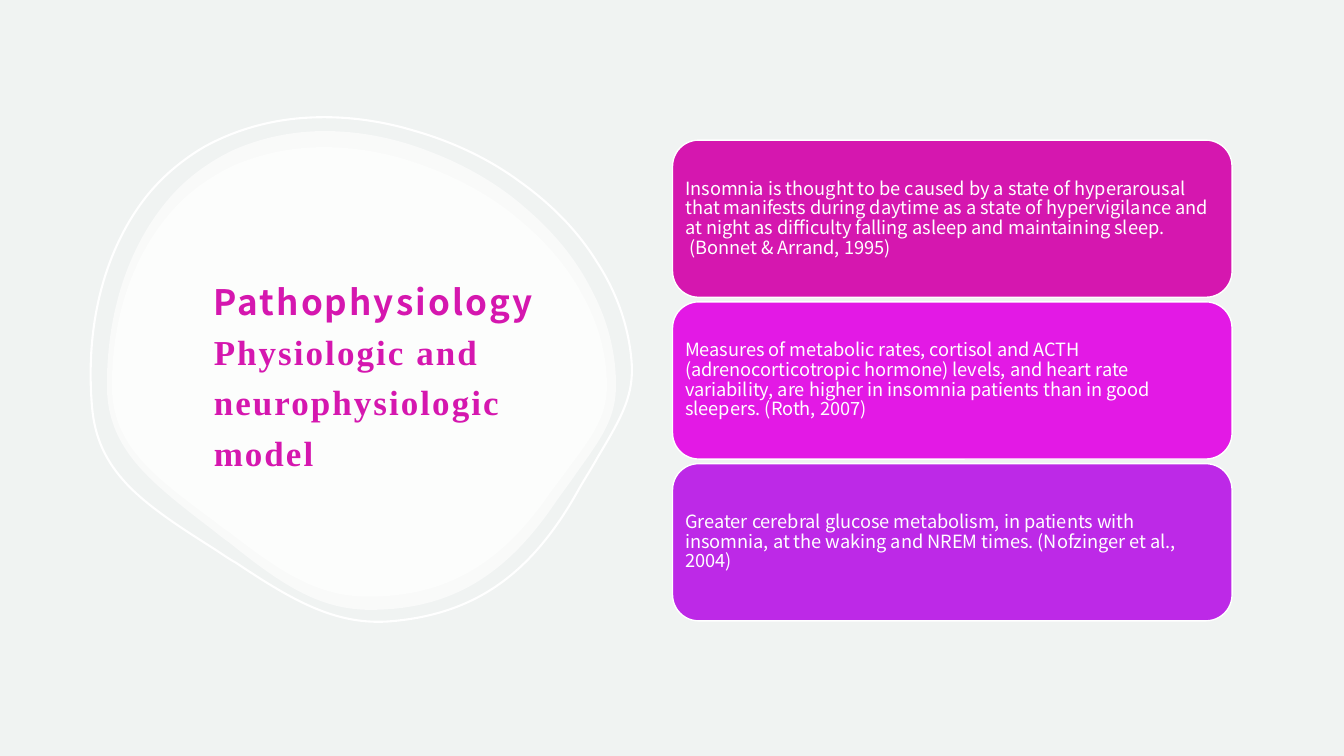
from copy import deepcopy
from lxml.etree import SubElement
from pptx import Presentation
from pptx.dml.color import RGBColor
from pptx.enum.shapes import MSO_SHAPE
from pptx.enum.text import MSO_ANCHOR, PP_ALIGN
from pptx.oxml.ns import qn
from pptx.util import Inches, Pt

SANS, SERIF = "Noto Sans CJK JP", "Times New Roman"
WHITE, PINK = "FFFFFF", "D517AF"
HARD_SPACE = chr(160)
BLOB_SIZE = (5.05, 4.75)
BLOB_START = (2.16, 0)
BLOB_CURVES = [
    ((1.83, 0), (1.52, 0.07), (1.25, 0.19)),
    ((1.0, 0.31), (0.77, 0.48), (0.59, 0.7)),
    ((0.21, 1.16), (0, 1.8), (0, 2.52)),
    ((0, 2.8), (0.08, 3.03), (0.26, 3.26)),
    ((0.45, 3.5), (0.74, 3.72), (1.04, 3.95)),
    ((1.09, 3.99), (1.15, 4.04), (1.21, 4.08)),
    ((1.72, 4.49), (2.1, 4.75), (2.61, 4.75)),
    ((3.39, 4.75), (3.95, 4.43), (4.46, 3.67)),
    ((4.53, 3.57), (4.6, 3.48), (4.66, 3.39)),
    ((4.92, 3.03), (5.05, 2.84), (5.05, 2.52)),
    ((5.05, 2.2), (4.97, 1.88), (4.81, 1.58)),
    ((4.66, 1.28), (4.44, 1.01), (4.16, 0.77)),
    ((3.89, 0.53), (3.56, 0.34), (3.22, 0.21)),
    ((2.87, 0.07), (2.51, 0), BLOB_START),
]
CARDS = [
    (PINK, "Insomnia is thought to be caused by a state of hyperarousal that manifests during "
           "daytime as a state of hypervigilance and at night as difficulty falling asleep and "
           f"maintaining sleep. {HARD_SPACE}(Bonnet & Arrand, 1995)"),
    ("E319E5", "Measures of metabolic rates, cortisol and ACTH (adrenocorticotropic hormone) "
               "levels, and heart rate variability, are higher in insomnia patients than in "
               "good sleepers. (Roth, 2007)"),
    ("BD29E7", "Greater cerebral glucose metabolism, in patients with insomnia, at the waking "
               f"and NREM times.{HARD_SPACE}(Nofzinger et al., 2004)"),
]


def color(hex_text):
    """Turn a hex string into a colour."""
    return RGBColor.from_string(hex_text)


def set_all(target, values):
    """Set every attribute named in a dict."""
    for name, value in values.items():
        setattr(target, name, value)


def format_frame(frame, insets):
    """Wrap and centre a text frame vertically, with left, top, right and bottom insets."""
    sides = ("margin_left", "margin_top", "margin_right", "margin_bottom")
    set_all(frame, {"word_wrap": True, "vertical_anchor": MSO_ANCHOR.MIDDLE})
    set_all(frame, dict(zip(sides, map(Inches, insets))))


def add_run(paragraph, text, fill, **font_values):
    """Add a run with its font values and colour."""
    run = paragraph.add_run()
    run.text = text
    set_all(run.font, font_values)
    run.font.color.rgb = color(fill)
    return run


def add_blob(slide, left, top, width, height):
    """Draw the curved blob outline stretched to a box."""
    def stretch(point):
        """Scale a blob point to the box size."""
        return (Inches(point[0] / BLOB_SIZE[0] * width),
                Inches(point[1] / BLOB_SIZE[1] * height))

    builder = slide.shapes.build_freeform(*stretch(BLOB_START))
    builder.add_line_segments([stretch(curve[-1]) for curve in BLOB_CURVES], close=True)
    shape = builder.convert_to_shape(Inches(left), Inches(top))
    segments = list(shape._element.iter(qn("a:lnTo")))
    for segment, curve in zip(segments, BLOB_CURVES):
        segment.tag = qn("a:cubicBezTo")
        for index, control in enumerate(curve[:2]):
            x, y = stretch(control)
            point = SubElement(segment, qn("a:pt"), x=str(x), y=str(y))
            segment.insert(index, point)
    shape.shadow.inherit = False
    return shape


def add_backdrop(slide, left, top):
    """Place two translucent blobs and a tilted outline around them."""
    for x, y, width, height in ((0.17, 0.17, 5.05, 4.75), (0.22, 0.33, 4.91, 4.46)):
        blob = add_blob(slide, left + x, top + y, width, height)
        blob.fill.solid()
        blob.fill.fore_color.rgb = color(WHITE)
        solid_color = next(blob._element.spPr.iter(qn("a:srgbClr")))
        SubElement(solid_color, qn("a:alpha"), val="60000")
        blob.line.fill.background()
    outline = add_blob(slide, left, top, 5.37, 5.05)
    outline.fill.background()
    outline.line.color.rgb = color(WHITE)
    outline.line.width = Pt(1.5)
    outline.rotation = -5


def add_title(slide, left, top, width, height):
    """Write the two-part title."""
    box = slide.shapes.add_textbox(*map(Inches, (left, top, width, height)))
    format_frame(box.text_frame, (0.12, 0.12, 0.12, 0.1))
    paragraph = box.text_frame.paragraphs[0]
    paragraph.line_spacing = 1.2
    values = {"size": Pt(25), "bold": True}
    heading = add_run(paragraph, "Pathophysiology ", PINK, name=SANS, **values)
    heading.font._element.set("spc", "150")
    paragraph.add_line_break()
    line_break = paragraph._p.find(qn("a:br"))
    line_break.append(deepcopy(heading.font._element))
    model = add_run(paragraph, "Physiologic and neurophysiologic model", PINK,
                    name=SERIF, **values)
    model.font._element.set("spc", "150")


def add_cards(slide, left, top, width, height):
    """Stack the coloured cards evenly down the box."""
    card_height = 1.56
    pitch = (height - card_height) / (len(CARDS) - 1)
    for index, (fill, text) in enumerate(CARDS):
        place = (left, top + index * pitch, width, card_height)
        card = slide.shapes.add_shape(MSO_SHAPE.ROUNDED_RECTANGLE, *map(Inches, place))
        card.shadow.inherit = False
        card.fill.solid()
        card.fill.fore_color.rgb = color(fill)
        card.line.color.rgb = color(WHITE)
        card.line.width = Pt(1)
        format_frame(card.text_frame, (0.05,) * 4)
        paragraph = card.text_frame.paragraphs[0]
        set_all(paragraph, {"alignment": PP_ALIGN.LEFT, "line_spacing": 0.9})
        add_run(paragraph, text, WHITE, name=SANS, size=Pt(13))


def main():
    """Build the slide and save it."""
    presentation = Presentation()
    set_all(presentation, {"slide_width": Inches(13.33), "slide_height": Inches(7.5)})
    slide = presentation.slides.add_slide(presentation.slide_layouts[6])
    slide.background.fill.solid()
    slide.background.fill.fore_color.rgb = color("F0F3F2")
    add_backdrop(slide, 0.89, 1.13)
    add_title(slide, 2, 2.08, 3.62, 3.21)
    add_cards(slide, 6.67, 1.39, 5.55, 4.77)
    presentation.save("out.pptx")


if __name__ == "__main__":
    main()
